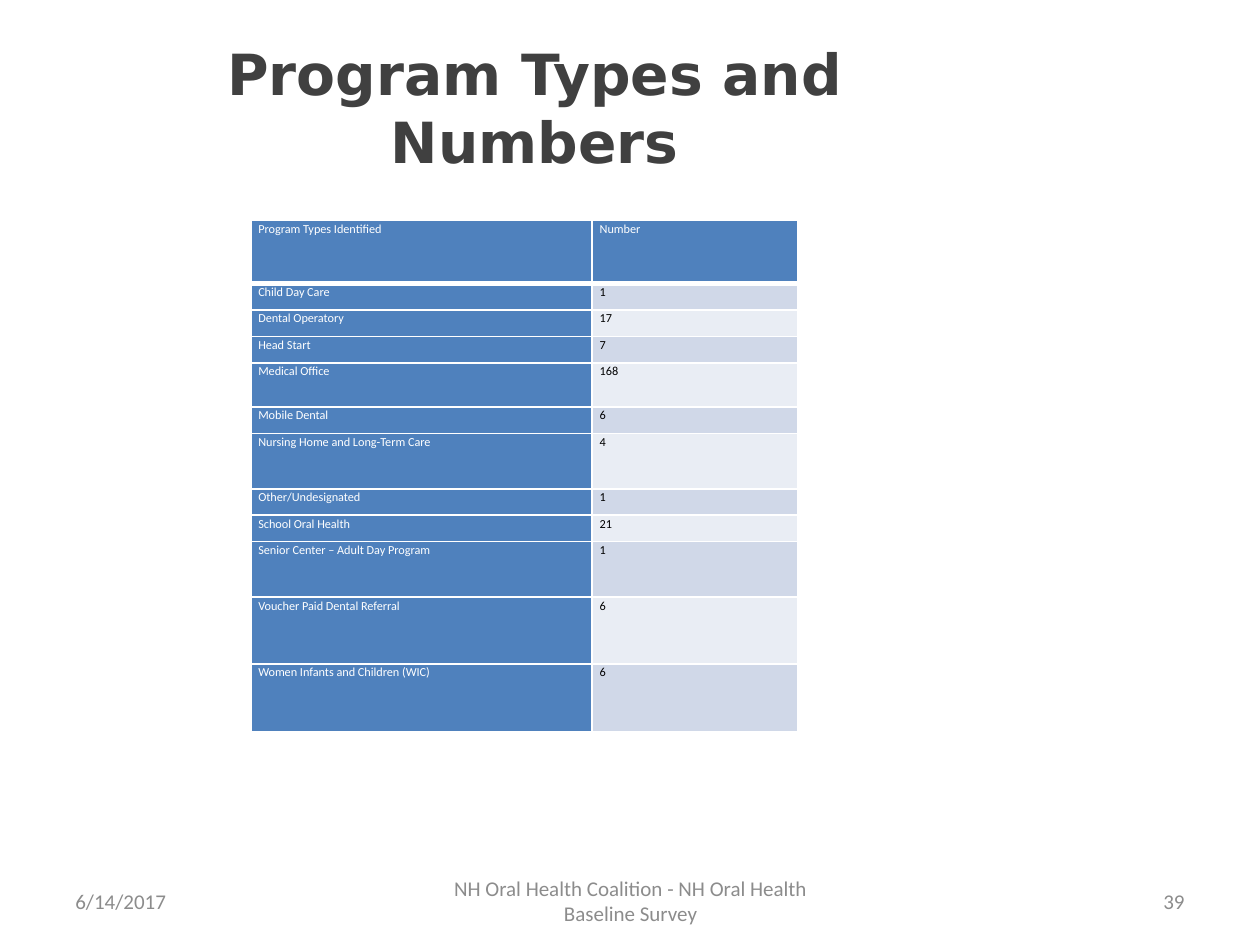
from dataclasses import dataclass

from lxml import etree
from pptx import Presentation
from pptx.dml.color import RGBColor
from pptx.enum.text import MSO_ANCHOR, PP_ALIGN
from pptx.oxml.ns import qn
from pptx.util import Emu, Inches, Pt

LEFT, CENTER, RIGHT = PP_ALIGN.LEFT, PP_ALIGN.CENTER, PP_ALIGN.RIGHT
MIDDLE = MSO_ANCHOR.MIDDLE
UNIT = Inches(0.1)  # the slide is a grid of 100 columns by 75 rows


@dataclass(frozen=True)
class Theme:
    title_font: str = "DejaVu Sans"
    body_font: str = "Calibri"
    title_size: float = 32.4
    footer_size: float = 12
    table_size: float = 7
    title: str = "404040"
    footer: str = "8C8C8C"
    label_fill: str = "4F81BD"
    bands: tuple[str, str] = ("D0D8E8", "E9EDF4")
    light: str = "FFFFFF"
    dark: str = "000000"
    border: float = 1
    header_border: float = 3


@dataclass(frozen=True)
class Label:
    text: str
    left: float
    top: float
    width: float
    height: float
    align: PP_ALIGN
    font: dict


@dataclass(frozen=True)
class Program:
    name: str
    number: str
    height: float = 2.1


THEME = Theme()
TITLE_FONT = {"name": THEME.title_font, "size": Pt(THEME.title_size),
              "bold": True, "color": THEME.title}
FOOTER_FONT = {"name": THEME.body_font, "size": Pt(THEME.footer_size),
               "color": THEME.footer}
TABLE_FONT = {"name": THEME.body_font, "size": Pt(THEME.table_size)}

FOOTER_TOP, FOOTER_HEIGHT = 69.5, 4
LABELS = [
    Label("Program Types and Numbers", 16.6, 6.1, 51.7, 4.8, CENTER, TITLE_FONT),
    Label("6/14/2017", 5, FOOTER_TOP, 23.3, FOOTER_HEIGHT, LEFT, FOOTER_FONT),
    Label("NH Oral Health Coalition - NH Oral Health Baseline Survey",
          34.2, FOOTER_TOP, 31.7, FOOTER_HEIGHT, CENTER, FOOTER_FONT),
    Label("39", 71.7, FOOTER_TOP, 23.3, FOOTER_HEIGHT, RIGHT, FOOTER_FONT),
]

TABLE_LEFT, TABLE_TOP = 19.9, 17.5
COLUMNS = (27.1, 16.3)
PROGRAMS = [
    Program("Program Types Identified", "Number", 5),
    Program("Child Day Care", "1"),
    Program("Dental Operatory", "17"),
    Program("Head Start", "7"),
    Program("Medical Office", "168", 3.5),
    Program("Mobile Dental", "6"),
    Program("Nursing Home and Long-Term Care", "4", 4.4),
    Program("Other/Undesignated", "1"),
    Program("School Oral Health", "21"),
    Program("Senior Center – Adult Day Program", "1", 4.4),
    Program("Voucher Paid Dental Referral", "6", 5.3),
    Program("Women Infants and Children (WIC)", "6", 5.4),
]


def grid(units: float) -> Emu:
    return Emu(round(units * UNIT))


def set_all(target, values: dict) -> None:
    for name, value in values.items():
        setattr(target, name, value)


def write(para, text: str, font: dict) -> None:
    span = para.add_run()
    span.text = text
    set_all(span.font, {key: value for key, value in font.items() if key != "color"})
    span.font.color.rgb = RGBColor.from_string(font["color"])


def add_label(page, label: Label) -> None:
    box = page.shapes.add_textbox(
        *map(grid, (label.left, label.top, label.width, label.height)))
    set_all(box.text_frame, {"word_wrap": True, "vertical_anchor": MIDDLE})
    para = box.text_frame.paragraphs[0]
    para.alignment = label.align
    write(para, label.text, label.font)


def add_borders(cell, widths: dict[str, float]) -> None:
    """Draw the cell's edges; they must come before its fill in the XML."""
    properties = cell._tc.get_or_add_tcPr()
    for edge, width in widths.items():
        line = etree.SubElement(properties, qn(f"a:{edge}"), w=str(Pt(width)))
        fill = etree.SubElement(line, qn("a:solidFill"))
        etree.SubElement(fill, qn("a:srgbClr"), val=THEME.light)


def fill_cell(cell, text: str, fill: str, color: str, is_header: bool) -> None:
    set_all(cell, {"margin_left": Inches(0.06), "margin_right": Inches(0.06),
                   "margin_top": 0, "margin_bottom": 0})
    bottom = THEME.header_border if is_header else THEME.border
    add_borders(cell, {"lnL": THEME.border, "lnR": THEME.border,
                       "lnT": THEME.border, "lnB": bottom})
    cell.fill.solid()
    cell.fill.fore_color.rgb = RGBColor.from_string(fill)
    para = cell.text_frame.paragraphs[0]
    set_all(para, {"line_spacing": 1.1, "space_after": Pt(6)})
    write(para, text, TABLE_FONT | {"color": color})


def add_program_table(page, programs: list[Program]) -> None:
    height = sum(program.height for program in programs)
    table = page.shapes.add_table(
        len(programs), len(COLUMNS),
        *map(grid, (TABLE_LEFT, TABLE_TOP, sum(COLUMNS), height))).table
    for column, width in zip(table.columns, COLUMNS):
        column.width = grid(width)
    for index, program in enumerate(programs):
        table.rows[index].height = grid(program.height)
        is_header = index == 0
        label_style = (THEME.label_fill, THEME.light)
        band_style = (THEME.bands[(index - 1) % 2], THEME.dark)
        number_style = label_style if is_header else band_style
        fill_cell(table.cell(index, 0), program.name, *label_style, is_header)
        fill_cell(table.cell(index, 1), program.number, *number_style, is_header)


def main() -> None:
    deck = Presentation()
    set_all(deck, {"slide_width": grid(100), "slide_height": grid(75)})
    page = deck.slides.add_slide(deck.slide_layouts[6])
    for label in LABELS:
        add_label(page, label)
    add_program_table(page, PROGRAMS)
    deck.save("out.pptx")


if __name__ == "__main__":
    main()
